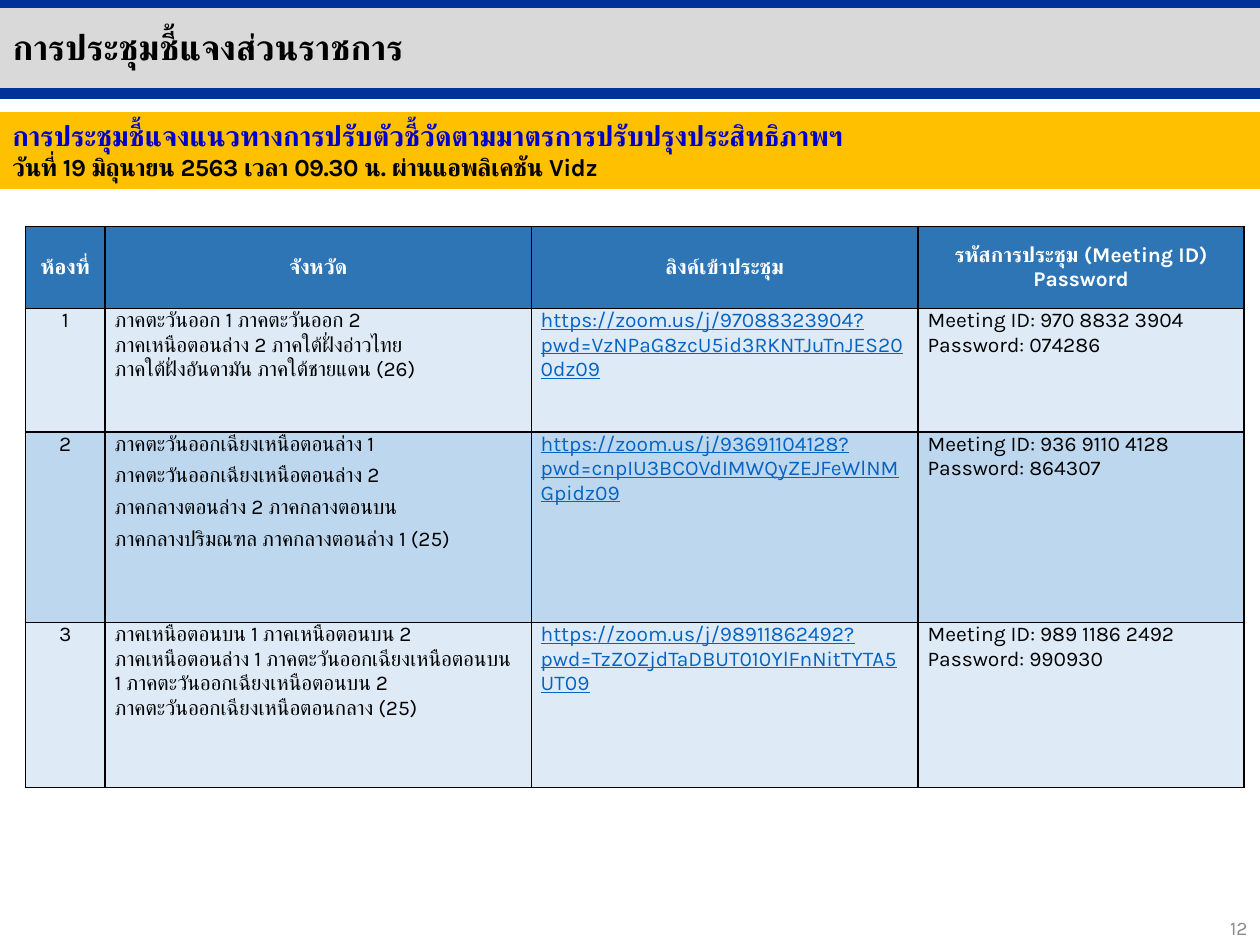
from lxml.etree import SubElement
from pptx import Presentation
from pptx.dml.color import RGBColor
from pptx.enum.shapes import MSO_CONNECTOR as Connector, MSO_SHAPE as Shape
from pptx.enum.text import MSO_ANCHOR as Anchor, MSO_AUTO_SIZE as AutoSize, PP_ALIGN as Align
from pptx.oxml.ns import qn
from pptx.util import Cm, Pt

FONT = "Karla"
COLORS = {
    "black": "000000", "white": "FFFFFF", "navy": "003399", "grey": "D9D9D9",
    "number": "8C8C8C", "amber": "FFC000", "blue": "0000CC", "header": "2E75B6",
    "pale": "DEEBF7", "light": "BDD7EE", "link": "0563C1",
}
SLIDE_WIDTH = 25.4
COLUMN_WIDTHS = (1.61, 8.59, 7.8, 6.57)
ROW_HEIGHTS = (1.65, 2.49, 3.84, 3.33)
HEADERS = (
    ["ห้องที่"], ["จังหวัด"], ["ลิงค์เข้าประชุม"],
    ["รหัสการประชุม (Meeting ID)", "Password"],
)
ROOMS = (
    (["ภาคตะวันออก 1 ภาคตะวันออก 2\n"
      "ภาคเหนือตอนล่าง 2 ภาคใต้ฝั่งอ่าวไทย\n"
      "ภาคใต้ฝั่งอันดามัน ภาคใต้ชายแดน (26)"],
     "https://zoom.us/j/97088323904?pwd=VzNPaG8zcU5id3RKNTJuTnJES200dz09",
     "970 8832 3904", "074286"),
    (["ภาคตะวันออกเฉียงเหนือตอนล่าง 1",
      "ภาคตะวันออกเฉียงเหนือตอนล่าง 2",
      "ภาคกลางตอนล่าง 2 ภาคกลางตอนบน",
      "ภาคกลางปริมณฑล ภาคกลางตอนล่าง 1 (25)"],
     "https://zoom.us/j/93691104128?pwd=cnpIU3BCOVdIMWQyZEJFeWlNMGpidz09",
     "936 9110 4128", "864307"),
    (["ภาคเหนือตอนบน 1 ภาคเหนือตอนบน 2\n"
      "ภาคเหนือตอนล่าง 1 ภาคตะวันออกเฉียงเหนือตอนบน 1 ภาคตะวันออกเฉียงเหนือตอนบน 2\n"
      "ภาคตะวันออกเฉียงเหนือตอนกลาง (25)"],
     "https://zoom.us/j/98911862492?pwd=TzZOZjdTaDBUT010YlFnNitTYTA5UT09",
     "989 1186 2492", "990930"),
)


def rgb(name):
    return RGBColor.from_string(COLORS[name])


def write(paragraph, text, size=12, color="black", bold=False, underline=False,
          align=Align.LEFT, spacing=None):
    paragraph.alignment = align
    for index, line in enumerate(text.splitlines()):
        if index:
            paragraph.add_line_break()
        run = paragraph.add_run()
        run.text = line
        font = run.font
        font.size, font.bold, font.underline = Pt(size), bold, underline
        font.color.rgb = rgb(color)
        font.name = FONT
        properties = run._r.get_or_add_rPr()
        SubElement(properties, qn("a:cs"), typeface=FONT)
        if spacing is not None:
            properties.set("spc", str(round(spacing * 100)))


def add_band(slide, top, height, color):
    band = slide.shapes.add_shape(Shape.RECTANGLE, 0, Cm(top), Cm(SLIDE_WIDTH), Cm(height))
    band.shadow.inherit = False
    band.fill.solid()
    band.fill.fore_color.rgb = rgb(color)
    band.line.fill.background()
    return band


def add_rule(slide, y):
    rule = slide.shapes.add_connector(Connector.STRAIGHT, 0, Cm(y), Cm(SLIDE_WIDTH), Cm(y))
    rule.line.color.rgb = rgb("navy")
    rule.line.width = Pt(6)
    SubElement(rule._element.spPr, qn("a:effectLst"))


def add_title(slide, text):
    title = slide.shapes.title
    slide.shapes._spTree.append(title._element)
    title.left, title.top, title.width, title.height = Cm(0), Cm(0.38), Cm(24.66), Cm(1.11)
    frame = title.text_frame
    frame.auto_size = AutoSize.NONE
    frame.vertical_anchor = Anchor.TOP
    write(frame.paragraphs[0], text, size=20, bold=True)


def add_banner(slide, heading, schedule):
    frame = add_band(slide, 2.26, 1.55, "amber").text_frame
    frame.word_wrap = True
    frame.vertical_anchor = Anchor.TOP
    paragraph = frame.paragraphs[0]
    write(paragraph, heading, size=16, color="blue", bold=True)
    paragraph.add_line_break()
    write(paragraph, schedule, size=14, bold=True, spacing=-0.3)


def add_page_number(slide, number):
    frame = slide.shapes.add_textbox(Cm(19.69), Cm(18.19), Cm(5.71), Cm(1.02)).text_frame
    frame.word_wrap = True
    frame.vertical_anchor = Anchor.MIDDLE
    write(frame.paragraphs[0], number, size=11, color="number", align=Align.RIGHT)


def add_borders(cell):
    properties = cell._tc.get_or_add_tcPr()
    for side in ("lnL", "lnR", "lnT", "lnB"):
        border = SubElement(properties, qn(f"a:{side}"), w=str(Pt(1)))
        fill = SubElement(border, qn("a:solidFill"))
        SubElement(fill, qn("a:srgbClr"), val=COLORS["black"])


def fill_cell(cell, texts, fill, anchor=Anchor.TOP, gap=0, **text_format):
    add_borders(cell)
    cell.fill.solid()
    cell.fill.fore_color.rgb = rgb(fill)
    cell.margin_left = cell.margin_right = Cm(0.19)
    cell.margin_top = cell.margin_bottom = 0
    cell.vertical_anchor = anchor
    frame = cell.text_frame
    for index, text in enumerate(texts):
        paragraph = frame.add_paragraph() if index else frame.paragraphs[0]
        write(paragraph, text, **text_format)
        paragraph.space_before = Pt(gap if index else 0)
        paragraph.space_after = Pt(gap)


def add_rooms_table(slide):
    table = slide.shapes.add_table(
        len(ROW_HEIGHTS), len(COLUMN_WIDTHS), Cm(0.51), Cm(4.57),
        Cm(sum(COLUMN_WIDTHS)), Cm(sum(ROW_HEIGHTS))).table
    for column, width in zip(table.columns, COLUMN_WIDTHS):
        column.width = Cm(width)
    for row, height in zip(table.rows, ROW_HEIGHTS):
        row.height = Cm(height)
    for column, header in enumerate(HEADERS):
        fill_cell(table.cell(0, column), header, "header", anchor=Anchor.MIDDLE,
                  color="white", bold=True, align=Align.CENTER)
    for room, (regions, link, meeting, password) in enumerate(ROOMS, 1):
        fill = "pale" if room % 2 else "light"
        fill_cell(table.cell(room, 0), [str(room)], fill, align=Align.CENTER)
        fill_cell(table.cell(room, 1), regions, fill, gap=2)
        fill_cell(table.cell(room, 2), [link], fill, color="link", underline=True)
        access = [f"Meeting ID: {meeting}", f"Password: {password}"]
        fill_cell(table.cell(room, 3), access, fill)


def main():
    deck = Presentation()
    deck.slide_width, deck.slide_height = Cm(SLIDE_WIDTH), Cm(19.05)
    slide = deck.slides.add_slide(deck.slide_layouts[5])
    add_band(slide, 0.13, 1.73, "grey")
    for y in (1.88, 0.05):
        add_rule(slide, y)
    add_page_number(slide, "12")
    add_title(slide, "การประชุมชี้แจงส่วนราชการ")
    add_banner(slide, "การประชุมชี้แจงแนวทางการปรับตัวชี้วัดตามมาตรการปรับปรุงประสิทธิภาพฯ",
               "วันที่ 19 มิถุนายน 2563 เวลา 09.30 น. ผ่านแอพลิเคชัน Vidz")
    add_rooms_table(slide)
    deck.save("out.pptx")


if __name__ == "__main__":
    main()
